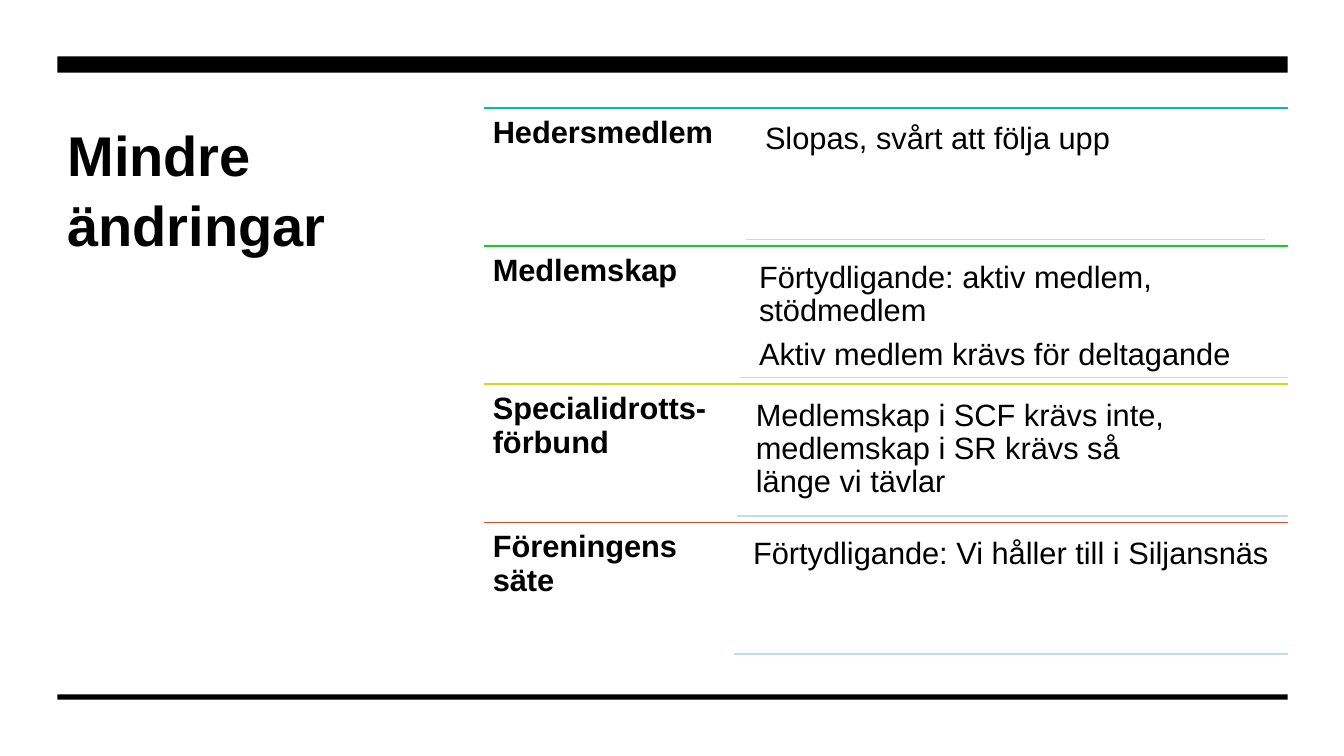
from pptx import Presentation
from pptx.dml.color import RGBColor
from pptx.enum.shapes import MSO_CONNECTOR, MSO_SHAPE
from pptx.enum.text import MSO_ANCHOR, MSO_AUTO_SIZE, PP_ALIGN
from pptx.oxml.ns import qn
from pptx.util import Cm, Pt
from lxml.etree import SubElement


def style_text(tf, text, size, bold, spacing, after, inset):
    tf.text = text
    tf.word_wrap = True
    tf.auto_size = MSO_AUTO_SIZE.NONE
    tf.vertical_anchor = MSO_ANCHOR.TOP
    tf.margin_left = tf.margin_right = Cm(inset)
    tf.margin_top = tf.margin_bottom = Cm(min(inset, 0.23))
    for p in tf.paragraphs:
        p.alignment = PP_ALIGN.LEFT
        p.line_spacing = spacing
        p.space_before = Pt(0)
        p.space_after = Pt(after)
        for r in p.runs:
            r.font.name = "Arial"
            r.font.size = Pt(size)
            r.font.bold = bold
            r.font.color.rgb = RGBColor.from_string("000000")


def add_rule(s, left, right, y, color):
    line = s.shapes.add_connector(MSO_CONNECTOR.STRAIGHT, Cm(left), Cm(y), Cm(right), Cm(y))
    line.line.color.rgb = RGBColor.from_string(color)
    line.line.width = Pt(1)
    SubElement(line._element.spPr, qn("a:effectLst"))


prs = Presentation()
prs.slide_width, prs.slide_height = Cm(33.87), Cm(19.05)
s = prs.slides.add_slide(prs.slide_layouts[5])

title = s.shapes.title
title.left, title.top, title.width, title.height = Cm(1.45), Cm(2.72), Cm(8.76), Cm(11.3)
style_text(title.text_frame, "Mindre ändringar", 40, True, 1.05, 0, 0.25)

for top, height in [(1.42, 0.41), (17.5, 0.13)]:
    bar = s.shapes.add_shape(MSO_SHAPE.RECTANGLE, Cm(1.45), Cm(top), Cm(31), Cm(height))
    bar.shadow.inherit = False
    bar.fill.solid()
    bar.fill.fore_color.rgb = RGBColor.from_string("000000")
    bar.line.fill.background()

LEFT, RIGHT, TOP, ROW = 12.19, 32.46, 2.72, 3.48
rows = [
    ("Hedersmedlem", "Slopas, svårt att följa upp", "00BAC8", 6.63, 19.05, 13.41, 31.88),
    ("Medlemskap", "Förtydligande: aktiv medlem, stödmedlem\nAktiv medlem krävs för deltagande",
     "08D61E", 6.48, 18.9, 13.56, RIGHT),
    ("Specialidrotts-förbund",
     "Medlemskap i SCF krävs inte, medlemskap i SR krävs så länge vi tävlar",
     "C3E311", 6.4, 18.82, 11.35, RIGHT),
    ("Föreningens säte", "Förtydligande: Vi håller till i Siljansnäs",
     "E64823", 6.3, 18.75, 13.69, RIGHT),
]
for i, (name, change, color, name_width, change_left, change_width, rule_right) in enumerate(rows):
    y = TOP + i * ROW
    add_rule(s, LEFT, RIGHT, y, color)
    for text, left, top, width, height, bold in [
        (name, LEFT, y, name_width, ROW, True),
        (change, change_left, y + 0.16, change_width, 3.15, False),
    ]:
        box = s.shapes.add_textbox(Cm(left), Cm(top), Cm(width), Cm(height))
        style_text(box.text_frame, text, 22, bold, 0.9, 7.7, 0.23)
    add_rule(s, change_left - 0.25, rule_right, y + 3.32, "BDE0E6")

prs.save("out.pptx")
